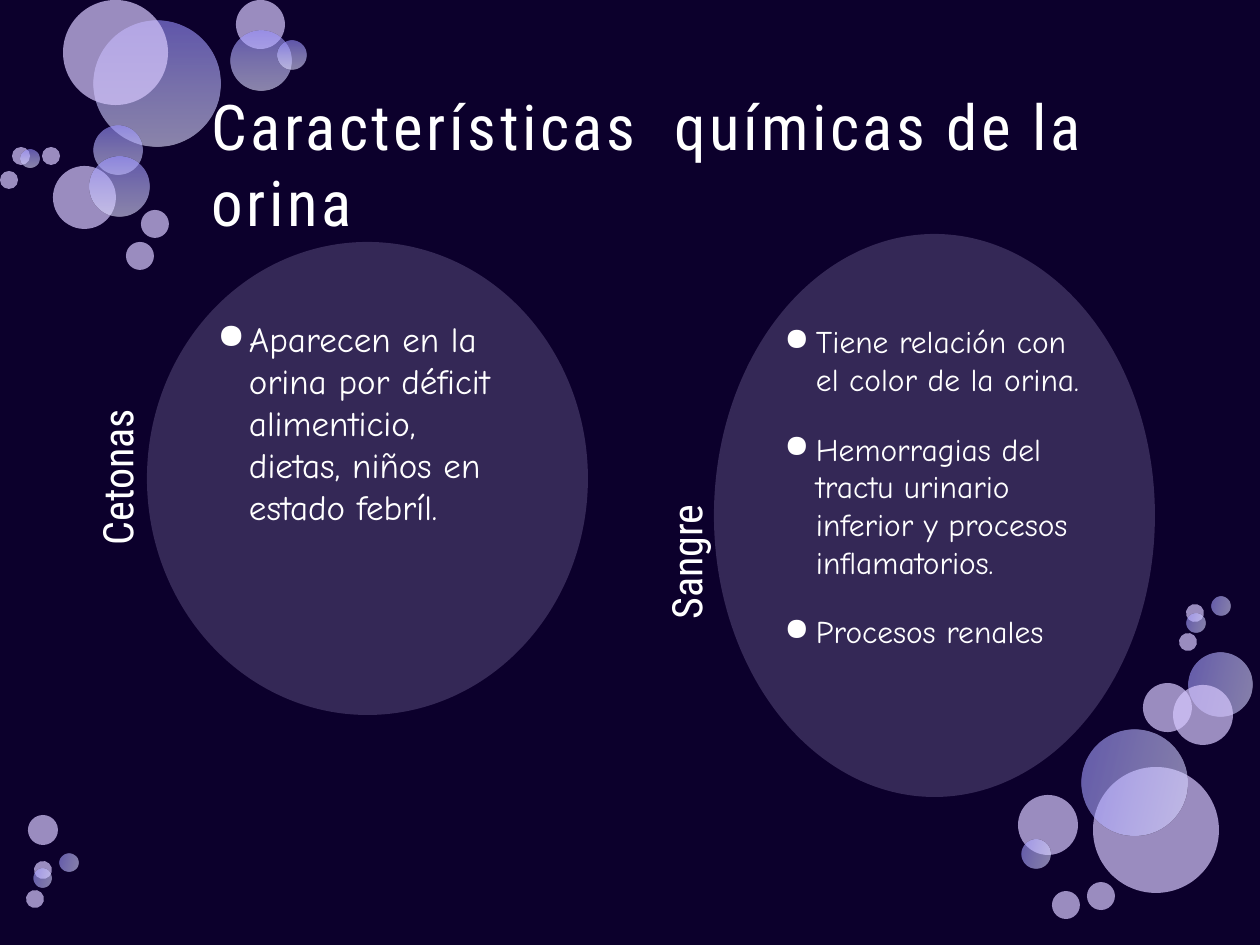
from lxml.etree import SubElement
from pptx import Presentation
from pptx.dml.color import RGBColor
from pptx.enum.shapes import MSO_SHAPE
from pptx.enum.text import MSO_ANCHOR, PP_ALIGN
from pptx.oxml.ns import qn
from pptx.util import Emu, Pt

PX = 914400 / 126
NIGHT = RGBColor(0x0C, 0x00, 0x2C)
LILAC = RGBColor(0xD7, 0xC8, 0xFE)
VIOLET = RGBColor(0x98, 0x90, 0xFF)
PERIWINKLE = RGBColor(0xBF, 0xBB, 0xFF)
MIST = RGBColor(0xE0, 0xDE, 0xFF)
WHITE = RGBColor(0xFF, 0xFF, 0xFF)

HEADING_FONT = "Roboto Condensed"
BODY_FONT = "Comic Neue"
SOLID, SHADED = "solid", "shaded"
TILT = 103.3

UPPER_BUBBLES = [
    (94, 21, 126, SHADED), (53, 166, 63, SOLID), (94, 126, 49, SHADED),
    (90, 157, 59, SHADED), (63, 0, 105, SOLID), (236, 0, 49, SOLID),
    (231, 31, 60, SHADED), (278, 41, 28, SHADED), (141, 210, 28, SOLID),
    (12, 147, 18, SOLID), (126, 242, 28, SOLID), (0, 171, 18, SOLID),
    (21, 150, 18, SHADED), (42, 147, 18, SOLID),
]
LOWER_BUBBLES = [
    (1093, 767, 126, SOLID), (1189, 653, 63, SHADED), (1143, 683, 49, SOLID),
    (1173, 685, 60, SOLID), (1082, 730, 105, SHADED), (28, 815, 30, SOLID),
    (1018, 795, 60, SOLID), (1022, 840, 28, SHADED), (1052, 891, 28, SOLID),
    (1186, 604, 18, SOLID), (1087, 882, 28, SOLID), (1212, 597, 18, SHADED),
    (1187, 614, 18, SHADED), (1179, 633, 18, SOLID), (34, 861, 18, SOLID),
    (60, 854, 18, SHADED), (34, 869, 18, SHADED), (26, 890, 18, SOLID),
]


def px(length):
    return Emu(round(length * PX))


def apply(target, values):
    for name, value in values.items():
        setattr(target, name, value)


def add_alpha(color, percent):
    SubElement(color, qn("a:alpha"), val=str(percent * 1000))


class BubblePage:
    """Draws bubbles and white text on one dark page."""

    def __init__(self, page):
        self.page = page
        self.text_color = WHITE
        self.stops = {0: VIOLET, 50: PERIWINKLE, 100: MIST}
        self.insets = dict.fromkeys(
            ("margin_left", "margin_top", "margin_right", "margin_bottom"), px(6))
        page.background.fill.solid()
        page.background.fill.fore_color.rgb = NIGHT

    def ellipse(self, left, top, width, height, opacity):
        shape = self.page.shapes.add_shape(
            MSO_SHAPE.OVAL, px(left), px(top), px(width), px(height))
        shape.shadow.inherit = False
        shape.line.fill.background()
        shape.fill.solid()
        shape.fill.fore_color.rgb = LILAC
        add_alpha(shape._element.spPr.find(".//" + qn("a:srgbClr")), opacity)
        return shape

    def shade(self, shape):
        shape.fill.gradient()
        shape.fill.gradient_angle = 270
        stop_list = shape._element.spPr.find(".//" + qn("a:gsLst"))
        stop_list.clear()
        for position, color in self.stops.items():
            stop = SubElement(stop_list, qn("a:gs"), pos=str(position * 1000))
            add_alpha(SubElement(stop, qn("a:srgbClr"), val=str(color)), 60)

    def bubble(self, left, top, size, style, rotation=0):
        shape = self.ellipse(left, top, size, size, 70)
        if style == SHADED:
            self.shade(shape)
        if rotation:
            shape.rotation = rotation
            shape._element.spPr.xfrm.set("flipV", "1")

    def add_span(self, para, text, font, size):
        span = para.add_run()
        span.text = text
        apply(span.font, {"name": font, "size": Pt(size)})
        span.font.color.rgb = self.text_color
        return span

    def text_box(self, left, top, width, height):
        box = self.page.shapes.add_textbox(px(left), px(top), px(width), px(height))
        apply(box.text_frame, {"word_wrap": True, "vertical_anchor": MSO_ANCHOR.MIDDLE})
        return box

    def title(self, text):
        box = self.text_box(199, 84, 914, 158)
        span = self.add_span(box.text_frame.paragraphs[0], text, HEADING_FONT, 36)
        span._r.get_or_add_rPr().set("spc", "200")

    def side_label(self, left, top, text):
        box = self.text_box(left, top, 473, 88)
        box.rotation = 270
        apply(box.text_frame, self.insets)
        para = box.text_frame.paragraphs[0]
        apply(para, {"alignment": PP_ALIGN.CENTER, "space_before": Pt(18)})
        self.add_span(para, text, HEADING_FONT, 24)

    def bullet_ellipse(self, left, top, height, size, items):
        frame = self.ellipse(left, top, 441, height, 20).text_frame
        apply(frame, {"word_wrap": True, "vertical_anchor": MSO_ANCHOR.TOP, **self.insets})
        for index, item in enumerate(items):
            para = frame.add_paragraph() if index else frame.paragraphs[0]
            apply(para, {"alignment": PP_ALIGN.LEFT, "space_before": Pt(18)})
            properties = para._p.get_or_add_pPr()
            indent = Pt(18)
            properties.set("marL", str(indent))
            properties.set("indent", str(-indent))
            SubElement(properties, qn("a:buChar"), char="●")
            self.add_span(para, item, BODY_FONT, size)


def main():
    deck = Presentation()
    apply(deck, {"slide_width": px(1260), "slide_height": px(945)})
    slide = BubblePage(deck.slides.add_slide(deck.slide_layouts[6]))
    for bubble in UPPER_BUBBLES:
        slide.bubble(*bubble)
    for bubble in LOWER_BUBBLES:
        slide.bubble(*bubble, rotation=TILT)

    slide.title("Características  químicas de la orina")
    slide.side_label(-120, 433, "Cetonas")
    slide.bullet_ellipse(147, 242, 473, 20, [
        "Aparecen en la orina por déficit alimenticio, dietas, niños en estado febríl.",
    ])
    slide.side_label(449, 518, "Sangre")
    slide.bullet_ellipse(714, 234, 563, 18, [
        "Tiene relación con el color de la orina.",
        "Hemorragias del tractu urinario inferior y procesos inflamatorios.",
        "Procesos renales",
    ])
    deck.save("out.pptx")


if __name__ == "__main__":
    main()
